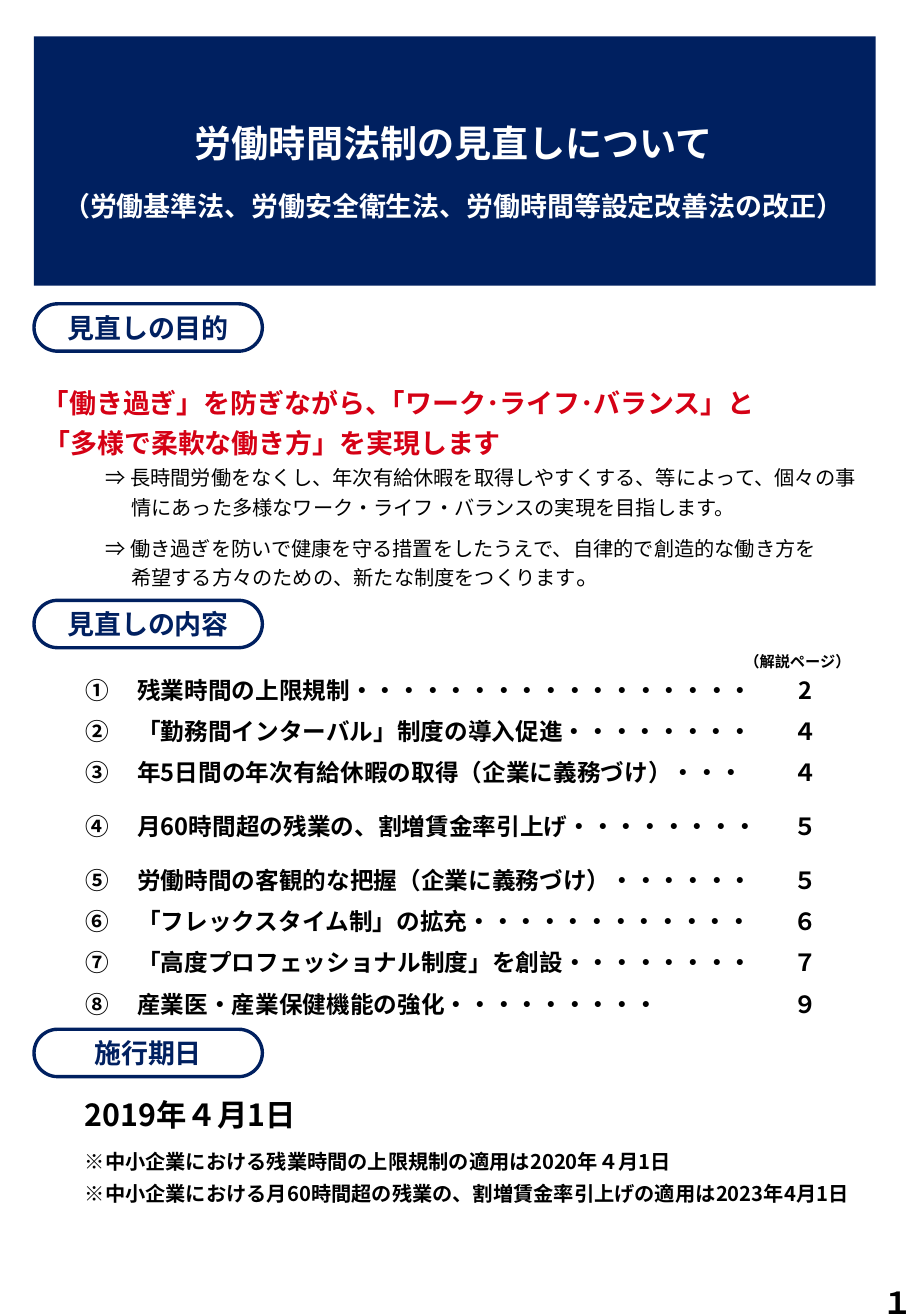
from lxml import etree
from pptx import Presentation
from pptx.dml.color import RGBColor
from pptx.enum import shapes, text
from pptx.oxml.ns import qn
from pptx.util import Inches, Pt

FONT = "Noto Sans CJK JP"
NAVY, RED, BLACK, WHITE = "002060", "D50115", "000000", "FFFFFF"
LEFT, MID, RIGHT, JUST = (text.PP_ALIGN.LEFT, text.PP_ALIGN.CENTER,
                          text.PP_ALIGN.RIGHT, text.PP_ALIGN.JUSTIFY)
PLAIN = "{2D5ABB26-0587-4C30-8999-92F81FD0307C}"

LABELS = [(2.5, "見直しの目的"), (4.94, "見直しの内容"), (8.47, "施行期日")]
AIMS = ["｢働き過ぎ」を防ぎながら、｢ワーク･ライフ･バランス」と",
        "「多様で柔軟な働き方」を実現します"]
NOTES = [
    ("⇒ 長時間労働をなくし、年次有給休暇を取得しやすくする、等によって、個々の事",
     "情にあった多様なワーク・ライフ・バランスの実現を目指します。", ""),
    ("⇒ 働き過ぎを防いで健康を守る措置をしたうえで、自律的で創造的な働き方を",
     "希望する方々のための、新たな制度をつくります", "。"),
]
ITEMS = [
    ("①", "残業時間の上限規制", 17, "2"),
    ("②", "「勤務間インターバル」制度の導入促進", 8, "４"),
    ("③", "年5日間の年次有給休暇の取得（企業に義務づけ）", 3, "４"),
    ("④", "月60時間超の残業の、割増賃金率引上げ", 8, "５"),
    ("⑤", "労働時間の客観的な把握（企業に義務づけ）", 6, "５"),
    ("➅", "「フレックスタイム制」の拡充", 12, "６"),
    ("⑦", "「高度プロフェッショナル制度」を創設", 8, "７"),
    ("⑧", "産業医・産業保健機能の強化", 9, "９"),
]
DATES = [("2019年４月1日", 18, 24),
         ("※中小企業における残業時間の上限規制の適用は2020年４月1日", 12, 24),
         ("※中小企業における月60時間超の残業の、割増賃金率引上げの適用は2023年4月1日",
          12, 19)]


def color(code):
    """Turn a hex string into a colour."""
    return RGBColor.from_string(code)


def add_run(para, words, size, tint=BLACK, bold=True):
    """Add one run with its Latin and East Asian fonts."""
    run = para.add_run()
    run.text = words
    font = run.font
    font.name, font.size, font.bold = FONT, Pt(size), bold
    font.color.rgb = color(tint)
    east = etree.Element(qn("a:ea"), typeface=FONT)
    run._r.rPr.find(qn("a:latin")).addnext(east)


def add_para(frame, words, size, tint=BLACK, bold=True, align=LEFT,
             line=None, before=0, indent=0):
    """Fill the empty first paragraph or append a new one."""
    para = frame.paragraphs[0]
    if para.runs:
        para = frame.add_paragraph()
    para.alignment = align
    para.space_before = Pt(before)
    if line:
        para.line_spacing = Pt(line)
    if indent:
        para._p.get_or_add_pPr().set("marL", str(Inches(indent)))
    add_run(para, words, size, tint, bold)
    return para


def set_frame(frame, anchor=text.MSO_ANCHOR.TOP, pad=(0.1, 0.05, 0.1, 0.05)):
    """Set wrapping, anchor and insets of a text frame."""
    frame.word_wrap = True
    frame.auto_size = text.MSO_AUTO_SIZE.NONE
    frame.vertical_anchor = anchor
    (frame.margin_left, frame.margin_top,
     frame.margin_right, frame.margin_bottom) = map(Inches, pad)
    return frame


def add_box(slide, place, **style):
    """Add a text box and return its frame."""
    box = slide.shapes.add_textbox(*map(Inches, place))
    return set_frame(box.text_frame, **style)


def add_title(slide):
    """Draw the banner behind the title and fill the title."""
    banner = slide.shapes.add_shape(
        shapes.MSO_SHAPE.RECTANGLE, *map(Inches, (0.28, 0.3, 6.93, 2.05)))
    banner.shadow.inherit = False
    banner.fill.solid()
    banner.fill.fore_color.rgb = color(NAVY)
    banner.line.fill.background()
    title = slide.shapes.title
    title._element.addprevious(banner._element)
    title.left, title.top, title.width, title.height = map(
        Inches, (-0.02, 0.9, 7.51, 1.01))
    frame = set_frame(title.text_frame, text.MSO_ANCHOR.MIDDLE)
    add_para(frame, "労働時間法制の見直しについて", 22, WHITE, align=MID)
    add_para(frame, "（労働基準法、労働安全衛生法、労働時間等設定改善法の改正）",
             16, WHITE, align=MID, before=14.5)


def add_label(slide, top, words):
    """Draw a pill-shaped section label."""
    pill = slide.shapes.add_shape(
        shapes.MSO_SHAPE.ROUNDED_RECTANGLE, *map(Inches, (0.28, top, 1.88, 0.39)))
    pill.adjustments[0] = 0.5
    pill.shadow.inherit = False
    pill.fill.background()
    pill.line.color.rgb = color(NAVY)
    pill.line.width = Pt(2)
    frame = set_frame(pill.text_frame, text.MSO_ANCHOR.MIDDLE, (0.04, 0, 0.04, 0))
    add_para(frame, words, 16, NAVY, align=MID)


def add_aims(slide):
    """Write the aims and their explanations."""
    frame = add_box(slide, (0.36, 3.09, 7.4, 2.01), pad=(0, 0.02, 0, 0))
    for words, indent in zip(AIMS, (0.1, 0)):
        add_para(frame, words, 16, RED, line=24, indent=indent)
    for row, (first, second, stop) in enumerate(NOTES):
        add_para(frame, first, 12, bold=False, line=18,
                 before=6 * row, indent=0.51)
        para = add_para(frame, second, 12, bold=False, line=18, indent=0.72)
        if stop:
            add_run(para, stop, 14, bold=False)


def add_items(slide):
    """Build the contents table."""
    height = 0.34
    frame = slide.shapes.add_table(
        len(ITEMS), 3, *map(Inches, (0.6, 5.5, 6.3, height * len(ITEMS))))
    table = frame.table
    table.first_row = table.horz_banding = False
    table._tbl.tblPr.find(qn("a:tableStyleId")).text = PLAIN
    for col, width in zip(table.columns, (0.43, 5.33, 0.54)):
        col.width = Inches(width)
    for row, (mark, name, dots, page) in zip(table.rows, ITEMS):
        row.height = Inches(height)
        values = (mark, name + "・" * dots, page)
        for cell, words, align in zip(row.cells, values, (JUST, JUST, MID)):
            cell.fill.background()
            cell.vertical_anchor = text.MSO_ANCHOR.MIDDLE
            cell.margin_top, cell.margin_bottom = Inches(0.08), Inches(0.02)
            cell.margin_left = cell.margin_right = Inches(0.1)
            add_para(cell.text_frame, words, 14, align=align, line=16)


def main():
    """Build and save the slide."""
    deck = Presentation()
    deck.slide_width, deck.slide_height = Inches(7.5), Inches(10.83)
    slide = deck.slides.add_slide(deck.slide_layouts[5])
    add_title(slide)
    add_items(slide)
    for top, words in LABELS:
        add_label(slide, top, words)
    add_aims(slide)
    add_para(add_box(slide, (6.03, 5.32, 1.42, 0.25)), "（解説ページ）", 9)
    dates = add_box(slide, (0.6, 8.94, 6.62, 1.04))
    for words, size, line in DATES:
        add_para(dates, words, size, line=line)
    page = add_box(slide, (5.86, 10.43, 1.75, 0.58), anchor=text.MSO_ANCHOR.MIDDLE)
    add_para(page, "１", 18, align=RIGHT)
    deck.save("out.pptx")


if __name__ == "__main__":
    main()
